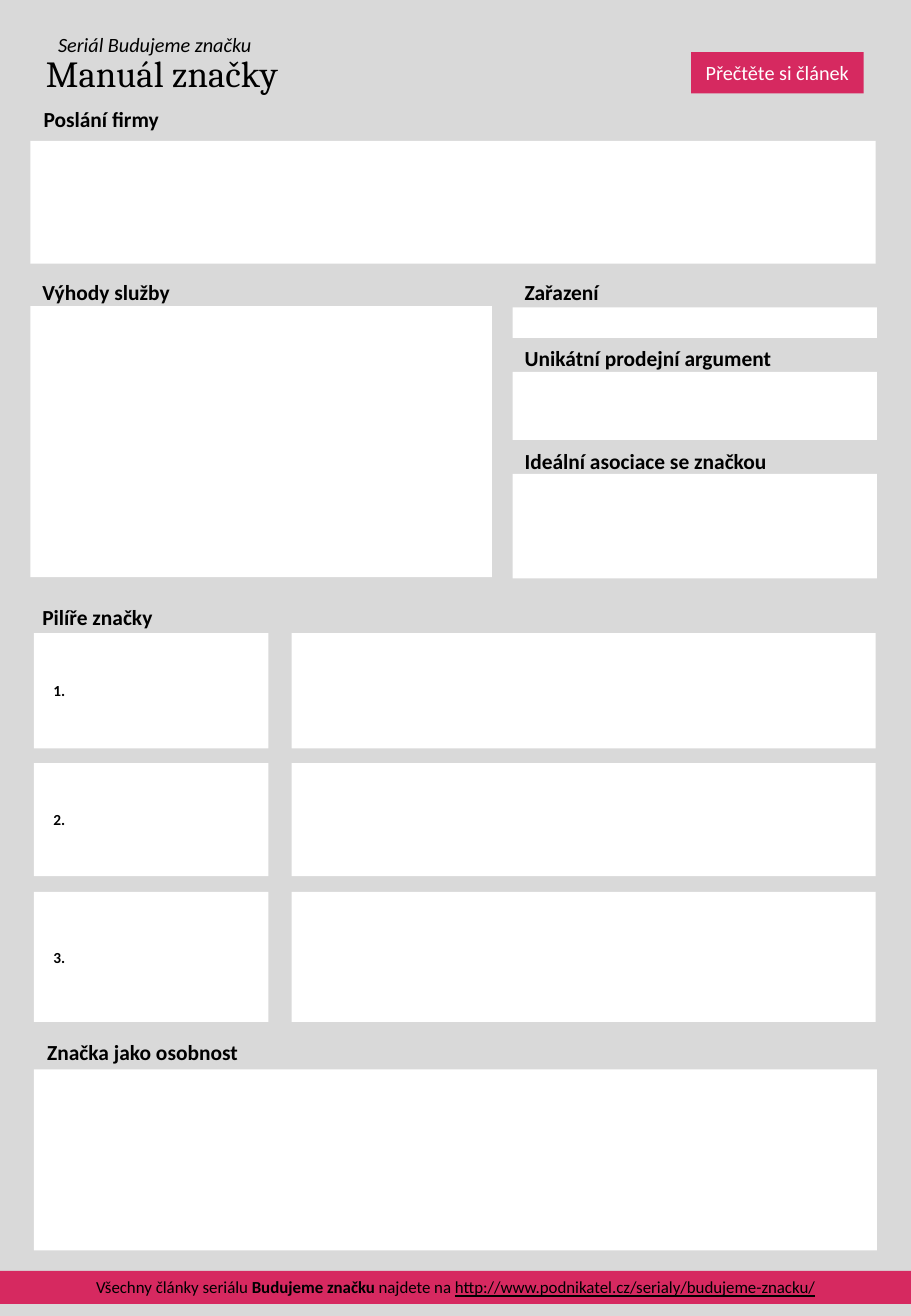
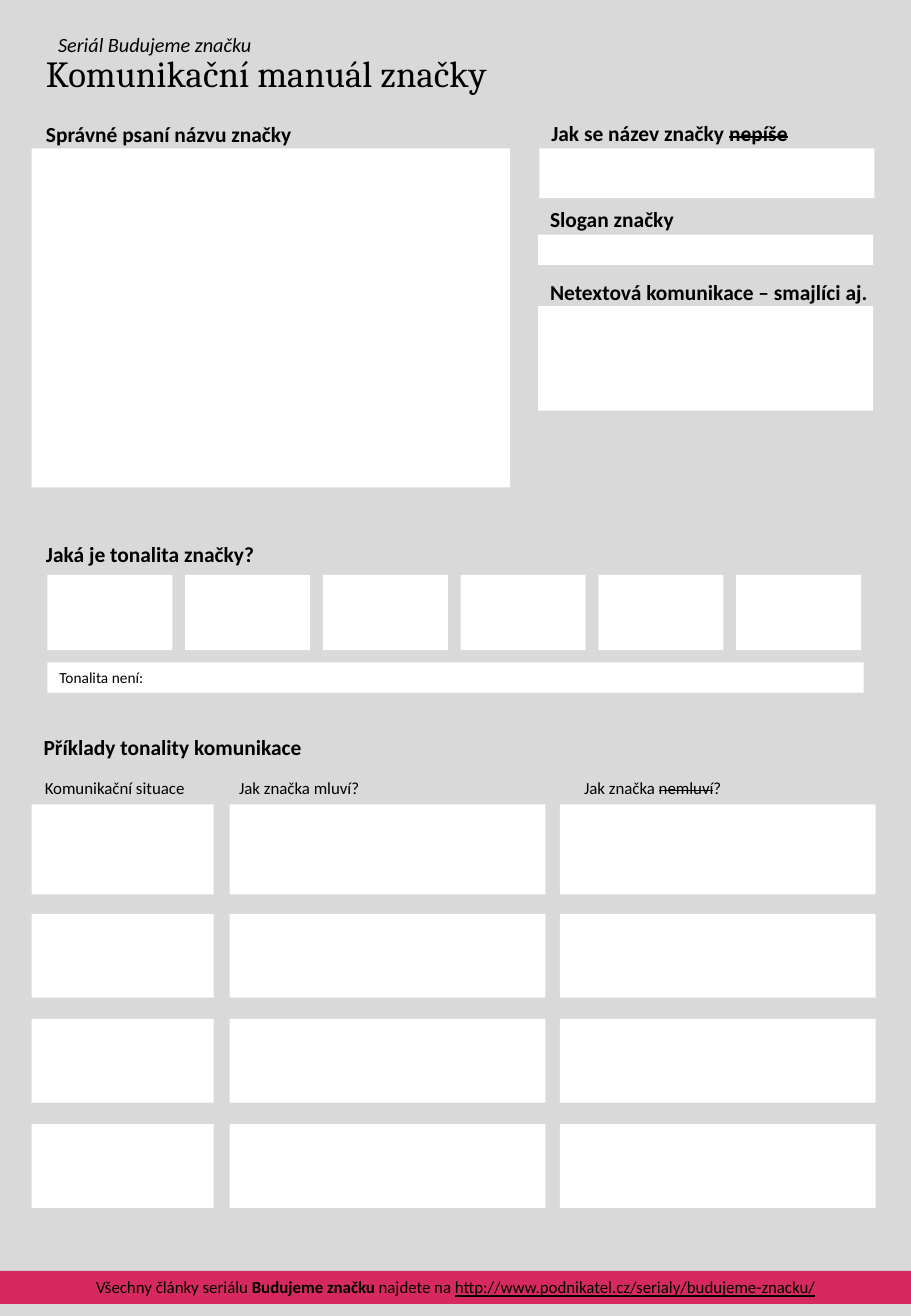
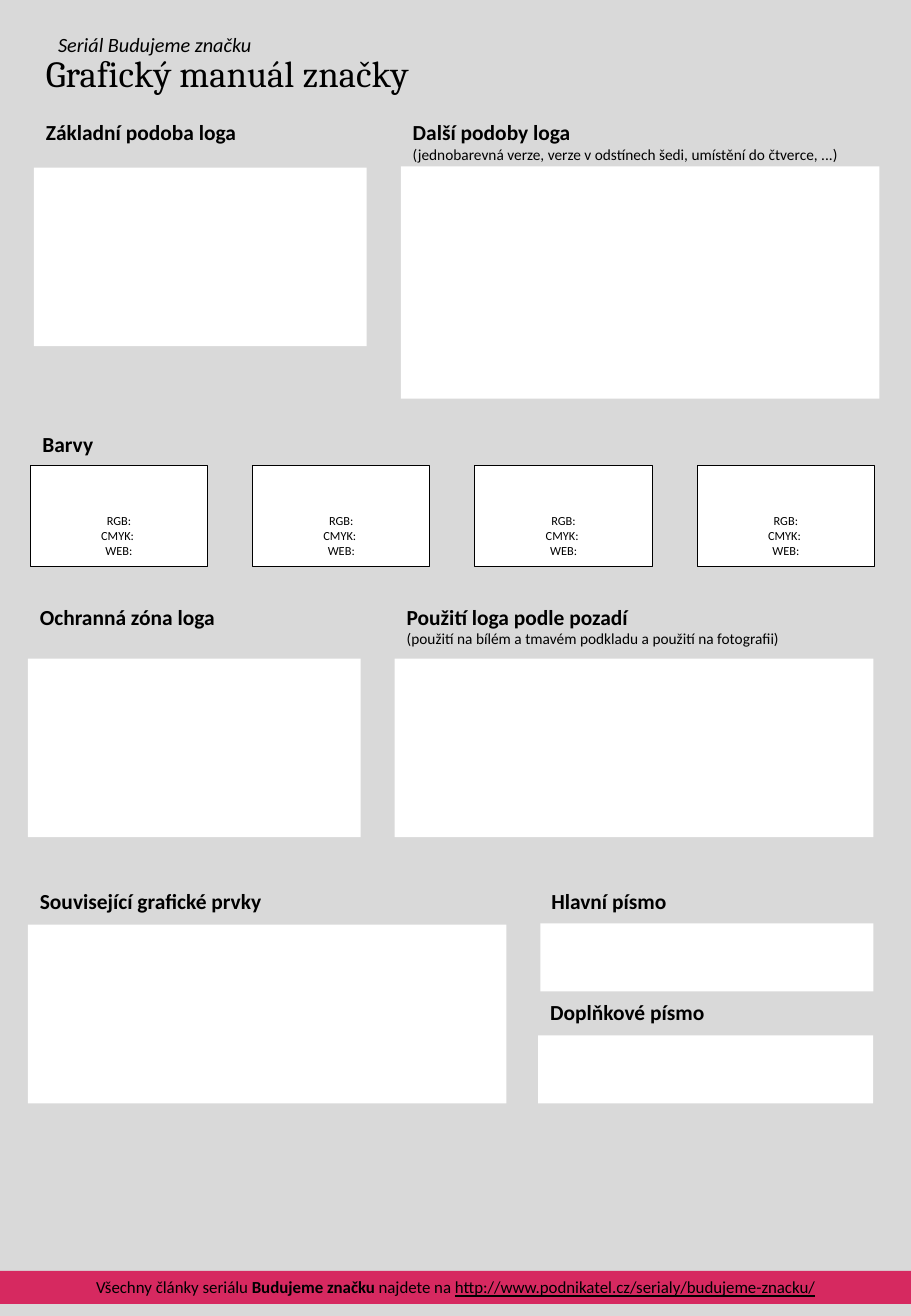
from pptx import Presentation
from pptx.dml.color import RGBColor
from pptx.enum.shapes import MSO_SHAPE
from pptx.enum.text import MSO_ANCHOR, PP_ALIGN
from pptx.util import Inches, Pt

RECTANGLE = MSO_SHAPE.RECTANGLE
TOP, MIDDLE, BOTTOM = MSO_ANCHOR.TOP, MSO_ANCHOR.MIDDLE, MSO_ANCHOR.BOTTOM
LEFT, CENTER = PP_ALIGN.LEFT, PP_ALIGN.CENTER

GREY = RGBColor(0xD9, 0xD9, 0xD9)
PINK = RGBColor(0xD6, 0x29, 0x60)
WHITE = RGBColor(0xFF, 0xFF, 0xFF)
BLACK = RGBColor(0x00, 0x00, 0x00)

BODY_FONT, TITLE_FONT = "Calibri", "Cambria"
TITLE_SIZE, LABEL_SIZE, TEXT_SIZE = 21.8, 12.7, 10
NOTE_SIZE, SWATCH_SIZE, SERIES_SIZE = 9.1, 7.3, 12


def add_panel(slide, left, top, width, height, fill=WHITE):
    """Add a borderless rectangle; all lengths are in inches."""
    panel = slide.shapes.add_shape(
        RECTANGLE, Inches(left), Inches(top), Inches(width), Inches(height))
    panel.shadow.inherit = False
    panel.fill.solid()
    panel.fill.fore_color.rgb = fill
    panel.line.fill.background()
    return panel


def write_text(shape, paragraphs, color=BLACK, font=BODY_FONT, alignment=LEFT, anchor=TOP):
    """Write (size, runs) paragraphs; a run is (text, flags) with flags b, i, u, s."""
    text_frame = shape.text_frame
    text_frame.word_wrap = True
    text_frame.vertical_anchor = anchor
    for index, (size, runs) in enumerate(paragraphs):
        paragraph = text_frame.add_paragraph() if index else text_frame.paragraphs[0]
        paragraph.alignment = alignment
        for text, flags in runs:
            run = paragraph.add_run()
            run.text = text
            run.font.name = font
            run.font.size = Pt(size)
            run.font.color.rgb = color
            run.font.bold = "b" in flags
            run.font.italic = "i" in flags
            run.font.underline = "u" in flags
            if "s" in flags:
                run.font._element.set("strike", "sngStrike")


presentation = Presentation()
presentation.slide_width = Inches(7.5)
presentation.slide_height = Inches(10.83)
blank_layout = presentation.slide_layouts[6]

# Contents: labels are (left, top, width, paragraphs), panels are boxes
PAGES = [
    {
        "title": "Manuál značky",
        "labels": [
            (0.26, 0.82, 3.92, [(LABEL_SIZE, [("Poslání firmy", "b")])]),
            (0.25, 2.25, 3.92, [(LABEL_SIZE, [("Výhody služby", "b")])]),
            (4.22, 2.25, 2.55, [(LABEL_SIZE, [("Zařazení", "b")])]),
            (4.22, 2.79, 2.55, [(LABEL_SIZE, [("Unikátní prodejní argument", "b")])]),
            (4.22, 3.64, 2.55, [(LABEL_SIZE, [("Ideální asociace se značkou", "b")])]),
            (0.25, 4.92, 3.93, [(LABEL_SIZE, [("Pilíře značky", "b")])]),
            (0.29, 8.5, 3.93, [(LABEL_SIZE, [("Značka jako osobnost", "b")])]),
        ],
        "panels": [
            (0.25, 1.16, 6.96, 1.01),
            (0.25, 2.52, 3.8, 2.23),
            (4.22, 2.53, 3, 0.25),
            (4.22, 3.06, 3, 0.56),
            (4.22, 3.9, 3, 0.86),
            (0.28, 8.8, 6.94, 1.49),
        ],
    },
    {
        "title": "Komunikační manuál značky",
        "labels": [
            (0.28, 0.95, 3.91, [(LABEL_SIZE, [("Správné psaní názvu značky", "b")])]),
            (4.44, 0.94, 2.75, [(LABEL_SIZE, [("Jak se název značky ", "b"), ("nepíše", "bs")])]),
            (4.43, 1.65, 2.75, [(LABEL_SIZE, [("Slogan značky", "b")])]),
            (4.43, 2.25, 2.91, [(LABEL_SIZE, [("Netextová komunikace – smajlíci aj.", "b")])]),
            (0.28, 4.4, 3.91, [(LABEL_SIZE, [("Jaká je tonalita značky?", "b")])]),
            (0.26, 5.99, 3.91, [(LABEL_SIZE, [("Příklady tonality komunikace", "b")])]),
            (0.27, 6.35, 1.41, [(TEXT_SIZE, [("Komunikační situace", "")])]),
            (1.87, 6.35, 1.62, [(TEXT_SIZE, [("Jak značka mluví?", "")])]),
            (4.71, 6.35, 1.62, [(TEXT_SIZE, [("Jak značka ", ""), ("nemluví", "s"), ("?", "")])]),
        ],
        "panels": [
            (0.26, 1.22, 3.94, 2.79),
            (4.44, 1.22, 2.76, 0.41),
            (4.43, 1.93, 2.76, 0.25),
            (4.43, 2.52, 2.76, 0.86),
        ],
    },
    {
        "title": "Grafický manuál značky",
        "labels": [
            (0.28, 0.93, 2.74, [(LABEL_SIZE, [("Základní podoba loga", "b")])]),
            (3.3, 0.93, 4.2, [
                (LABEL_SIZE, [("Další podoby loga", "b")]),
                (NOTE_SIZE, [("(jednobarevná verze, verze v odstínech šedi, "
                              "umístění do čtverce, ...)", "")]),
            ]),
            (0.25, 3.5, 6.91, [(LABEL_SIZE, [("Barvy", "b")])]),
            (0.23, 4.92, 2.74, [(LABEL_SIZE, [("Ochranná zóna loga", "b")])]),
            (3.25, 4.92, 4.2, [
                (LABEL_SIZE, [("Použití loga podle pozadí", "b")]),
                (NOTE_SIZE, [("(použití na bílém a tmavém podkladu "
                              "a použití na fotografii)", "")]),
            ]),
            (0.23, 7.26, 3.91, [(LABEL_SIZE, [("Související grafické prvky", "b")])]),
            (4.44, 7.26, 2.75, [(LABEL_SIZE, [("Hlavní písmo", "b")])]),
            (4.43, 8.17, 2.75, [(LABEL_SIZE, [("Doplňkové písmo", "b")])]),
        ],
        "panels": [
            (0.28, 1.38, 2.74, 1.47),
            (3.3, 1.37, 3.94, 1.91),
            (0.23, 5.42, 2.74, 1.47),
            (3.25, 5.42, 3.94, 1.47),
            (0.23, 7.61, 3.94, 1.47),
            (4.45, 7.6, 2.74, 0.56),
            (4.43, 8.52, 2.76, 0.56),
        ],
    },
]

slides = [presentation.slides.add_slide(blank_layout) for page in PAGES]
manual_slide, communication_slide, graphic_slide = slides

# Shared background, footer band and series name, moved to the layout
presentation.slide_master.background.fill.solid()
presentation.slide_master.background.fill.fore_color.rgb = GREY
for placeholder in list(blank_layout.placeholders):
    placeholder.element.getparent().remove(placeholder.element)

footer = add_panel(manual_slide, 0, 10.46, 7.5, 0.27, PINK)
write_text(footer, [(TEXT_SIZE, [
    ("Všechny články seriálu ", ""),
    ("Budujeme značku ", "b"),
    ("najdete na ", ""),
    ("http://www.podnikatel.cz/serialy/budujeme-znacku/", "u"),
])], alignment=CENTER)
series_name = manual_slide.shapes.add_textbox(Inches(0.38), Inches(0.22), Inches(4), Inches(0.3))
write_text(series_name, [(SERIES_SIZE, [("Seriál Budujeme značku", "i")])])
for shape in (footer, series_name):
    blank_layout.shapes.element.append(shape.element)

# Title, panels and labels of every slide
for slide, page in zip(slides, PAGES):
    title = slide.shapes.add_textbox(Inches(0.28), Inches(0.37), Inches(5.57), Inches(0.47))
    write_text(title, [(TITLE_SIZE, [(page["title"], "")])], font=TITLE_FONT)
    for box in page["panels"]:
        add_panel(slide, *box)
    for left, top, width, paragraphs in page["labels"]:
        height = 0.31 if len(paragraphs) == 1 else 0.47
        label = slide.shapes.add_textbox(
            Inches(left), Inches(top), Inches(width), Inches(height))
        write_text(label, paragraphs)

# Brand manual: article button and numbered pillars
button = add_panel(manual_slide, 5.69, 0.43, 1.42, 0.34, PINK)
write_text(button, [(SERIES_SIZE, [("Přečtěte si článek", "")])],
           color=WHITE, alignment=CENTER, anchor=MIDDLE)
for number, (top, height) in enumerate([(5.21, 0.95), (6.28, 0.93), (7.34, 1.07)], start=1):
    pillar = add_panel(manual_slide, 0.28, top, 1.93, height)
    pillar.text_frame.margin_left = Inches(0.16)
    write_text(pillar, [(NOTE_SIZE, [(f"{number}.", "b")])], anchor=MIDDLE)
    add_panel(manual_slide, 2.4, top, 4.81, height)

# Communication manual: tone boxes and grid of examples
tone_step = (6.06 - 0.39) / 5
for column in range(6):
    add_panel(communication_slide, 0.39 + column * tone_step, 4.73, 1.03, 0.62)
not_tone = add_panel(communication_slide, 0.39, 5.45, 6.72, 0.25)
write_text(not_tone, [(NOTE_SIZE, [("Tonalita není:", "")])])

row_step = (9.25 - 7.52) / 2
example_rows = [(6.62, 0.74)] + [(7.52 + row * row_step, 0.69) for row in range(3)]
for top, height in example_rows:
    for left, width in [(0.26, 1.5), (1.89, 2.6), (4.61, 2.6)]:
        add_panel(communication_slide, left, top, width, height)

# Graphic manual: colour swatches
for column in range(4):
    swatch = add_panel(graphic_slide, 0.25 + column * 1.83, 3.83, 1.46, 0.83)
    swatch.line.color.rgb = BLACK
    swatch.line.width = Pt(0.75)
    swatch.text_frame.margin_bottom = Inches(0.07)
    write_text(swatch, [(SWATCH_SIZE, [(text, "")]) for text in ("RGB:", "CMYK: ", "WEB:")],
               alignment=CENTER, anchor=BOTTOM)

presentation.save("out.pptx")
